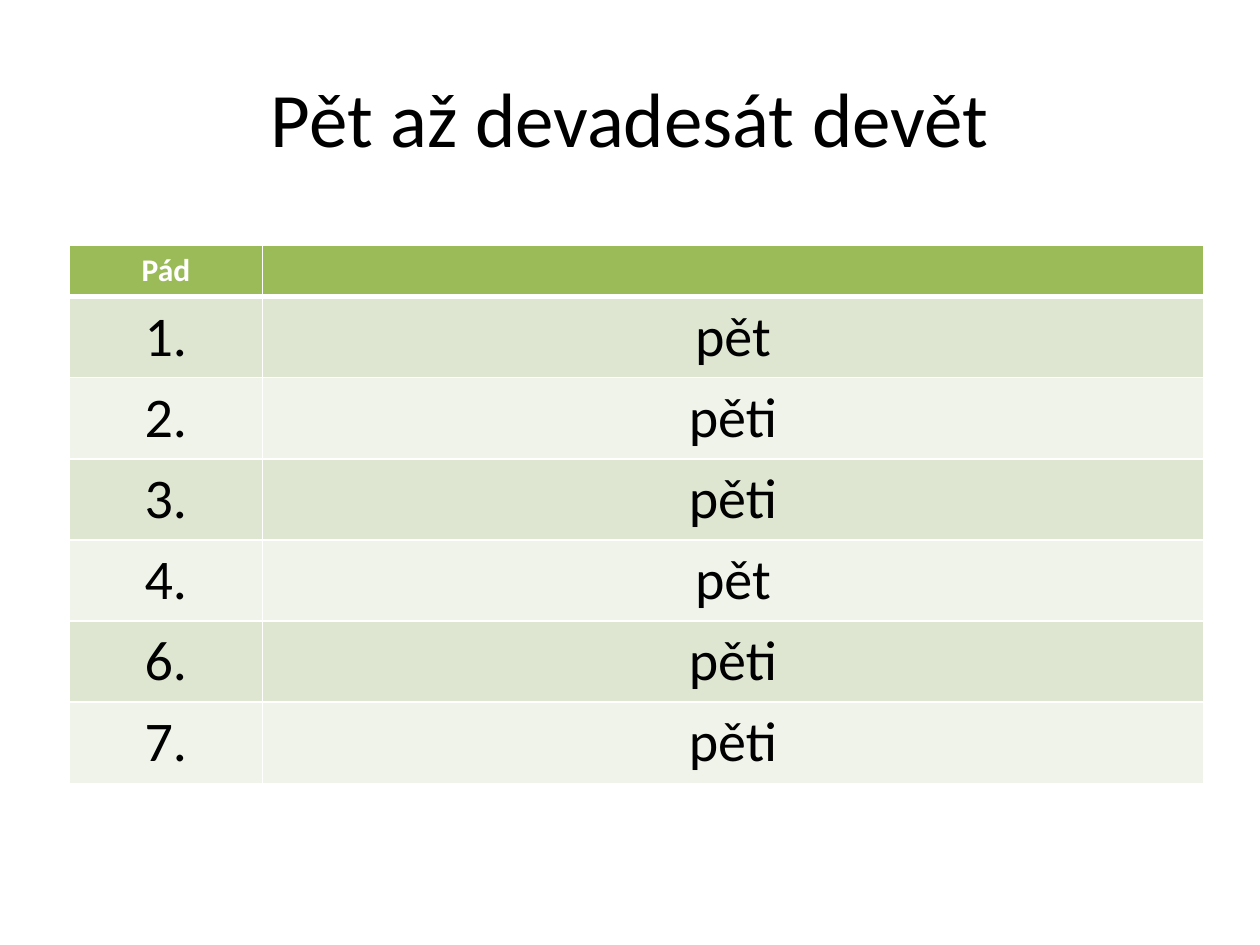
"""Build a slide with the case forms of the Czech numeral five."""
import lxml.etree
import pptx
import pptx.dml.color
import pptx.enum.text
import pptx.oxml.ns
import pptx.util

Cm = pptx.util.Cm
Pt = pptx.util.Pt
FORMS = [("1.", "pět"), ("2.", "pěti"), ("3.", "pěti"),
         ("4.", "pět"), ("6.", "pěti"), ("7.", "pěti")]
BANDS = ["DEE6D1", "EFF3E9"]
HEAD = "9BBB59"
WHITE = "FFFFFF"
THIN, THICK = 0.96, 3


def paint(color, code):
    """Set a color format from a hex string."""
    color.rgb = pptx.dml.color.RGBColor.from_string(code)


def write(frame, text, size=32, color="000000", bold=False):
    """Put centred, formatted text in a frame."""
    frame.word_wrap = True
    para = frame.paragraphs[0]
    para.alignment = pptx.enum.text.PP_ALIGN.CENTER
    if text:
        run = para.add_run()
        run.text = text
        font = run.font
        font.name, font.size, font.bold = "Calibri", Pt(size), bold
        paint(font.color, color)


def edge(cell, side, width):
    """Draw one white border of a cell."""
    qn = pptx.oxml.ns.qn
    props = cell._tc.get_or_add_tcPr()
    line = lxml.etree.SubElement(props, qn("a:ln" + side), w=str(int(Pt(width))))
    fill = lxml.etree.SubElement(line, qn("a:solidFill"))
    lxml.etree.SubElement(fill, qn("a:srgbClr"), val=WHITE)


def style(cell, fill, top=THIN, bottom=THIN):
    """Give a cell its borders and fill."""
    for side, width in zip("LRTB", (THIN, THIN, top, bottom)):
        edge(cell, side, width)
    cell.fill.solid()
    paint(cell.fill.fore_color, fill)


def add_title(slide, text):
    """Place and format the title."""
    title = slide.shapes.title
    title.left, title.top = Cm(1.27), Cm(0.76)
    title.width, title.height = Cm(22.86), Cm(3.18)
    title.text_frame.vertical_anchor = pptx.enum.text.MSO_ANCHOR.MIDDLE
    write(title.text_frame, text, size=44)


def add_forms(slide):
    """Add the table of cases and forms."""
    rows = [("Pád", "")] + FORMS
    table = slide.shapes.add_table(
        len(rows), 2, Cm(1.4), Cm(4.95), Cm(22.86), Cm(7.21)).table
    for col, width in zip(table.columns, (3.89, 18.97)):
        col.width = Cm(width)
    for i, row in enumerate(rows):
        table.rows[i].height = Cm(1.4 if i else 0.89)
        for j, text in enumerate(row):
            cell = table.cell(i, j)
            if i:
                style(cell, BANDS[(i - 1) % 2], top=THICK if i == 1 else THIN)
                write(cell.text_frame, text)
            else:
                style(cell, HEAD, bottom=THICK)
                write(cell.text_frame, text, size=18, color=WHITE, bold=True)


def main():
    """Build and save the slide."""
    deck = pptx.Presentation()
    deck.slide_width, deck.slide_height = Cm(25.4), Cm(19.05)
    slide = deck.slides.add_slide(deck.slide_layouts[5])
    add_title(slide, "Pět až devadesát devět")
    add_forms(slide)
    deck.save("out.pptx")


if __name__ == "__main__":
    main()
